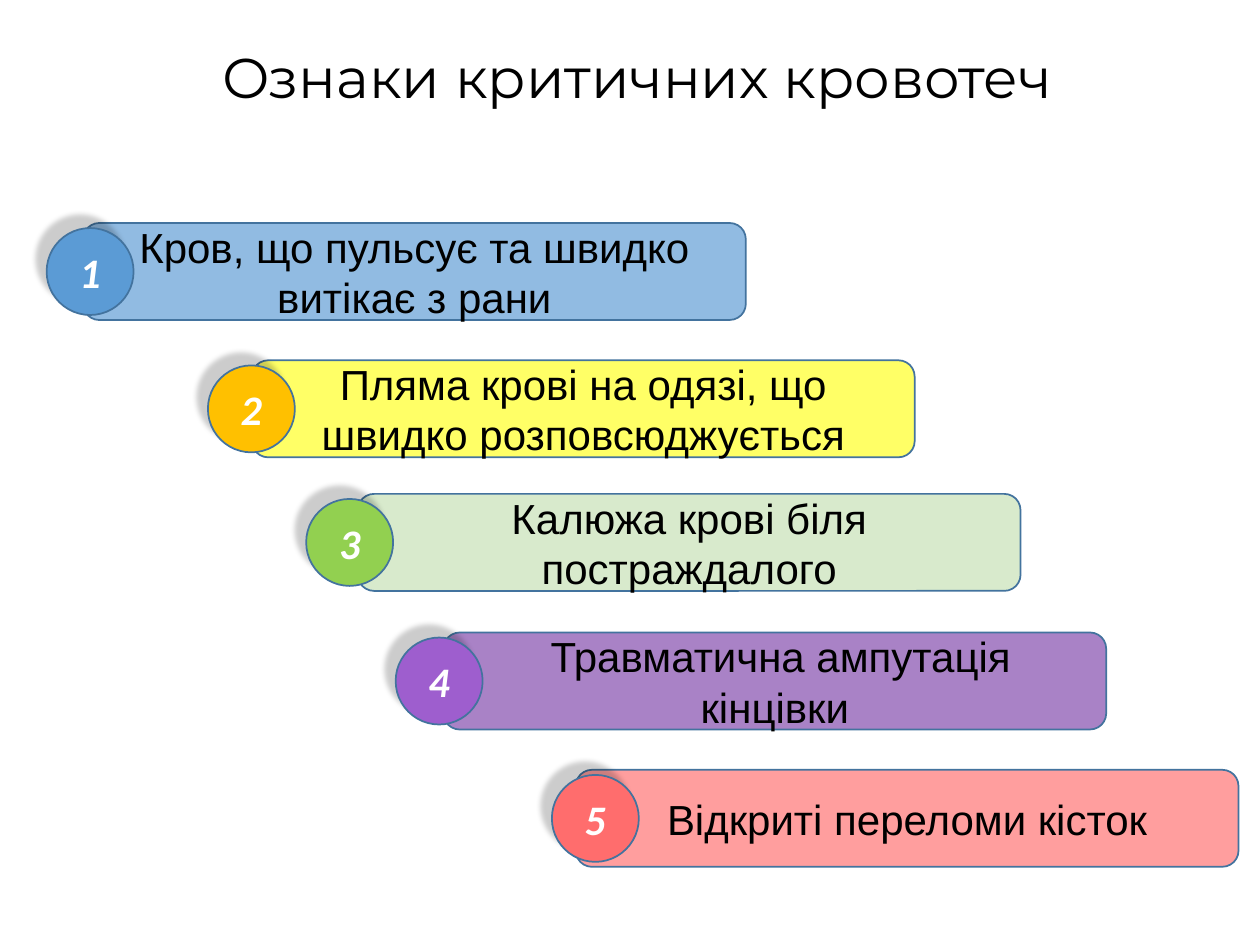
from lxml.etree import SubElement
from pptx import Presentation
from pptx.dml.color import RGBColor
from pptx.enum.shapes import MSO_SHAPE
from pptx.enum.text import MSO_ANCHOR, MSO_AUTO_SIZE, PP_ALIGN
from pptx.oxml.ns import qn
from pptx.util import Inches, Pt

BLACK = RGBColor(0x00, 0x00, 0x00)
WHITE = RGBColor(0xFF, 0xFF, 0xFF)
OUTLINE = RGBColor(0x43, 0x73, 0x9E)
BLUE = RGBColor(0x5B, 0x9B, 0xD5)
YELLOW = RGBColor(0xFF, 0xFF, 0x00)
AMBER = RGBColor(0xFF, 0xC0, 0x00)
PALE_GREEN = RGBColor(0xC5, 0xE0, 0xB4)
GREEN = RGBColor(0x92, 0xD0, 0x50)
PURPLE = RGBColor(0x70, 0x30, 0xA0)
VIOLET = RGBColor(0x9E, 0x5E, 0xCE)
RED = RGBColor(0xFF, 0x00, 0x00)
CORAL = RGBColor(0xFF, 0x6D, 0x6D)

TITLE = "Ознаки критичних кровотеч"
SIGNS = [
    ("Кров, що пульсує та швидко витікає з рани", 0.66, 1.77, 0.37, BLUE, 67, BLUE),
    ("Пляма крові на одязі, що швидко розповсюджується", 2, 2.86, 1.65, YELLOW, 60, AMBER),
    ("Калюжа крові біля постраждалого", 2.84, 3.92, 2.43, PALE_GREEN, 67, GREEN),
    (" Травматична ампутація кінцівки", 3.52, 5.02, 3.14, PURPLE, 60, VIOLET),
    ("Відкриті переломи кісток", 4.57, 6.11, 4.38, RED, 38, CORAL),
]
BAR_WIDTH, BAR_HEIGHT, BADGE_SIZE = 5.26, 0.77, 0.69
BADGE_DROP = (BAR_HEIGHT - BADGE_SIZE) / 2

TITLE_FONT = {"name": "Montserrat", "size": Pt(32)}
SIGN_FONT = {"name": "Arial", "size": Pt(24)}
NUMBER_FONT = {"name": "Calibri", "size": Pt(24), "bold": True, "italic": True}


def write(frame, text, font_format, color):
    paragraph = frame.paragraphs[0]
    paragraph.alignment = PP_ALIGN.CENTER
    run = paragraph.add_run()
    run.text = text
    for name, value in font_format.items():
        setattr(run.font, name, value)
    run.font.color.rgb = color


def add_part(group, kind, box, fill, text, font_format, color):
    part = group.shapes.add_shape(kind, *map(Inches, box))
    part.shadow.inherit = False
    part.fill.solid()
    part.fill.fore_color.rgb = fill
    part.line.color.rgb = OUTLINE
    part.line.width = Pt(1)
    part.text_frame.vertical_anchor = MSO_ANCHOR.MIDDLE
    write(part.text_frame, text, font_format, color)
    return part


def set_alpha(color_element, percent):
    SubElement(color_element, qn("a:alpha"), val=str(percent * 1000))


def cast_shadow(badge):
    effects = badge._element.spPr.find(qn("a:effectLst"))
    shadow = SubElement(effects, qn("a:outerShdw"), blurRad=str(Pt(3)),
                        dist=str(Pt(9)), dir=str(230 * 60000), rotWithShape="0")
    set_alpha(SubElement(shadow, qn("a:srgbClr"), val=str(BLACK)), 20)


def main():
    deck = Presentation()
    deck.slide_width, deck.slide_height = Inches(10), Inches(7.5)
    slide = deck.slides.add_slide(deck.slide_layouts[6])

    title = slide.shapes.add_textbox(*map(Inches, (1.37, 0.29, 7.38, 0.64)))
    title.text_frame.word_wrap = False
    title.text_frame.auto_size = MSO_AUTO_SIZE.SHAPE_TO_FIT_TEXT
    write(title.text_frame, TITLE, TITLE_FONT, BLACK)

    for number, sign in enumerate(SIGNS, 1):
        text, bar_left, top, badge_left, bar_fill, opacity, badge_fill = sign
        group = slide.shapes.add_group_shape()
        bar = add_part(group, MSO_SHAPE.ROUNDED_RECTANGLE,
                       (bar_left, top, BAR_WIDTH, BAR_HEIGHT),
                       bar_fill, text, SIGN_FONT, BLACK)
        set_alpha(bar._element.spPr.find(qn("a:solidFill"))[0], opacity)
        badge = add_part(group, MSO_SHAPE.OVAL,
                         (badge_left, top + BADGE_DROP, BADGE_SIZE, BADGE_SIZE),
                         badge_fill, str(number), NUMBER_FONT, WHITE)
        cast_shadow(badge)

    deck.save("out.pptx")


if __name__ == "__main__":
    main()
